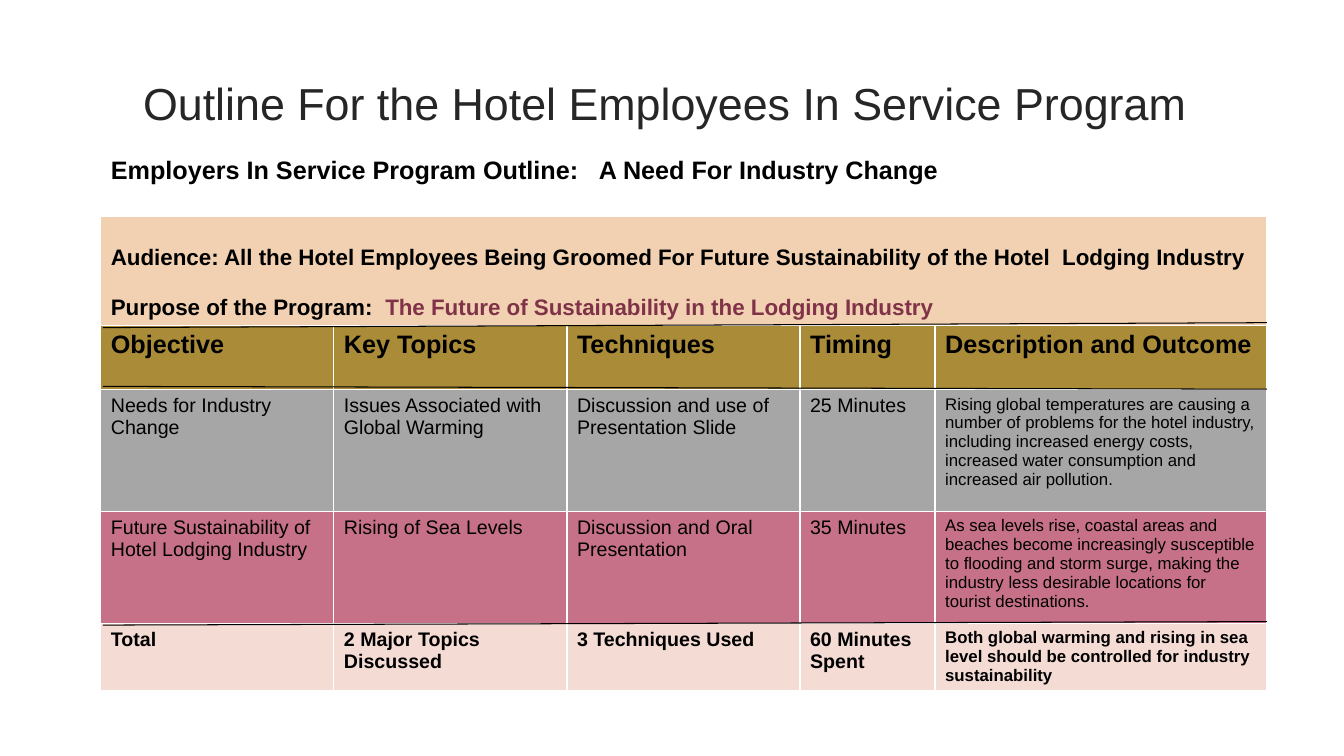
from lxml import etree
from pptx import Presentation
from pptx import util as u
from pptx.dml.color import RGBColor
from pptx.enum import shapes, text
from pptx.oxml import ns

Pt = u.Pt
BLACK = RGBColor(0x00, 0x00, 0x00)
WHITE = RGBColor(0xFF, 0xFF, 0xFF)
CHARCOAL = RGBColor(0x26, 0x26, 0x26)
PLUM = RGBColor(0x80, 0x33, 0x48)
PEACH = RGBColor(0xF1, 0xD1, 0xB1)
GOLD = RGBColor(0xAA, 0x8B, 0x38)
GREY = RGBColor(0xA6, 0xA6, 0xA6)
ROSE = RGBColor(0xC6, 0x71, 0x88)
BLUSH = RGBColor(0xF4, 0xDB, 0xD4)

COLUMN_WIDTHS = [166.5, 166.5, 166.5, 96.5, 237]
ROW_HEIGHTS = [46, 78.5, 46, 87, 80, 46]

# fill, size, size in the last column, bold, cell texts
PROGRAM_ROWS = [
    (GOLD, 18, 18, True,
     ["Objective", "Key Topics", "Techniques", "Timing", "Description and Outcome"]),
    (GREY, 14, 12, False,
     ["Needs for Industry Change", "Issues Associated with Global Warming",
      "Discussion and use of Presentation Slide", "25 Minutes",
      "Rising global temperatures are causing a number of problems for the hotel "
      "industry, including increased energy costs, increased water consumption and "
      "increased air pollution."]),
    (ROSE, 14, 12, False,
     ["Future Sustainability of Hotel Lodging Industry", "Rising of Sea Levels",
      "Discussion and Oral Presentation", "35 Minutes",
      "As sea levels rise, coastal areas and beaches become increasingly susceptible "
      "to flooding and storm surge, making the industry less desirable locations for "
      "tourist destinations."]),
    (BLUSH, 14, 12, True,
     ["Total", "2 Major Topics Discussed", "3 Techniques Used", "60 Minutes Spent",
      "Both global warming and rising in sea level should be controlled for industry "
      "sustainability"]),
]

# start and end heights of the rules across the table
RULES = [(234, 230.5), (446.5, 444), (276, 278)]


class OutlinePage:
    def __init__(self, deck, font="Arial"):
        self.font = font
        self.page = deck.slides.add_slide(deck.slide_layouts[5])

    def span(self, para, words, size, bold=False, color=BLACK):
        span = para.add_run()
        span.text = words
        span.font.name = self.font
        span.font.size = Pt(size)
        span.font.bold = bold
        span.font.color.rgb = color

    def title(self, words, left, top, width, height):
        box = self.page.shapes.title
        box.left, box.top, box.width, box.height = map(Pt, (left, top, width, height))
        box.fill.solid()
        box.fill.fore_color.rgb = WHITE
        frame = box.text_frame
        frame.word_wrap = True
        frame.auto_size = text.MSO_AUTO_SIZE.NONE
        frame.vertical_anchor = text.MSO_ANCHOR.MIDDLE
        para = frame.paragraphs[0]
        para.alignment = text.PP_ALIGN.CENTER
        self.span(para, words, 32, color=CHARCOAL)

    def table(self, left, top):
        frame = self.page.shapes.add_table(
            len(ROW_HEIGHTS), len(COLUMN_WIDTHS), Pt(left), Pt(top),
            Pt(sum(COLUMN_WIDTHS)), Pt(sum(ROW_HEIGHTS)))
        table = frame.table
        table.first_row = table.horz_banding = False
        for column, width in zip(table.columns, COLUMN_WIDTHS):
            column.width = Pt(width)
        for row, height in zip(table.rows, ROW_HEIGHTS):
            row.height = Pt(height)
        return table

    def paint(self, cell, fill, bottom=1):
        """Give a cell white borders and a solid fill."""
        props = cell._tc.get_or_add_tcPr()
        for side, width in (("L", 1), ("R", 1), ("T", 1), ("B", bottom)):
            border = etree.SubElement(props, ns.qn(f"a:ln{side}"), w=str(Pt(width)))
            solid = etree.SubElement(border, ns.qn("a:solidFill"))
            etree.SubElement(solid, ns.qn("a:srgbClr"), val=str(WHITE))
        cell.fill.solid()
        cell.fill.fore_color.rgb = fill

    def banner(self, table, row, fill, bottom=1):
        """Merge a whole row into one cell."""
        for cell in table.rows[row].cells:
            self.paint(cell, fill, bottom)
        first = table.cell(row, 0)
        first.merge(table.cell(row, len(COLUMN_WIDTHS) - 1))
        return first.text_frame

    def tab_stop(self, para, position):
        stops = etree.SubElement(para._p.get_or_add_pPr(), ns.qn("a:tabLst"))
        etree.SubElement(stops, ns.qn("a:tab"), pos=str(Pt(position)), algn="l")

    def rule(self, left, start, right, end):
        line = self.page.shapes.add_connector(
            shapes.MSO_CONNECTOR.STRAIGHT, Pt(left), Pt(start), Pt(right), Pt(end))
        line.line.color.rgb = BLACK
        line.line.width = Pt(0.75)
        etree.SubElement(line._element.spPr, ns.qn("a:effectLst"))


def main():
    deck = Presentation()
    deck.slide_width, deck.slide_height = Pt(960), Pt(540)
    outline = OutlinePage(deck)
    outline.title("Outline For the Hotel Employees In Service Program", 85, 49, 780.5, 48)
    table = outline.table(72, 108)

    para = outline.banner(table, 0, WHITE, bottom=3).paragraphs[0]
    outline.tab_stop(para, 348.5)
    outline.span(para, "Employers In Service Program Outline:\tA Need For Industry Change",
                 18, True)

    frame = outline.banner(table, 1, PEACH)
    audience, purpose = frame.paragraphs[0], frame.add_paragraph()
    audience.line_spacing = purpose.line_spacing = 2.0
    outline.span(audience, "Audience: All the Hotel Employees Being Groomed For Future "
                 "Sustainability of the Hotel  Lodging Industry", 16, True)
    outline.tab_stop(purpose, 196)
    outline.span(purpose, "Purpose of the Program:\t", 16, True)
    outline.span(purpose, "The Future of Sustainability in the Lodging Industry",
                 16, True, PLUM)

    for row, (fill, size, last_size, bold, words) in enumerate(PROGRAM_ROWS, start=2):
        sizes = [size] * (len(words) - 1) + [last_size]
        for cell, entry, points in zip(table.rows[row].cells, words, sizes):
            outline.paint(cell, fill)
            outline.span(cell.text_frame.paragraphs[0], entry, points, bold)

    for start, end in RULES:
        outline.rule(73.5, start, 905, end)
    deck.save("out.pptx")


if __name__ == "__main__":
    main()
